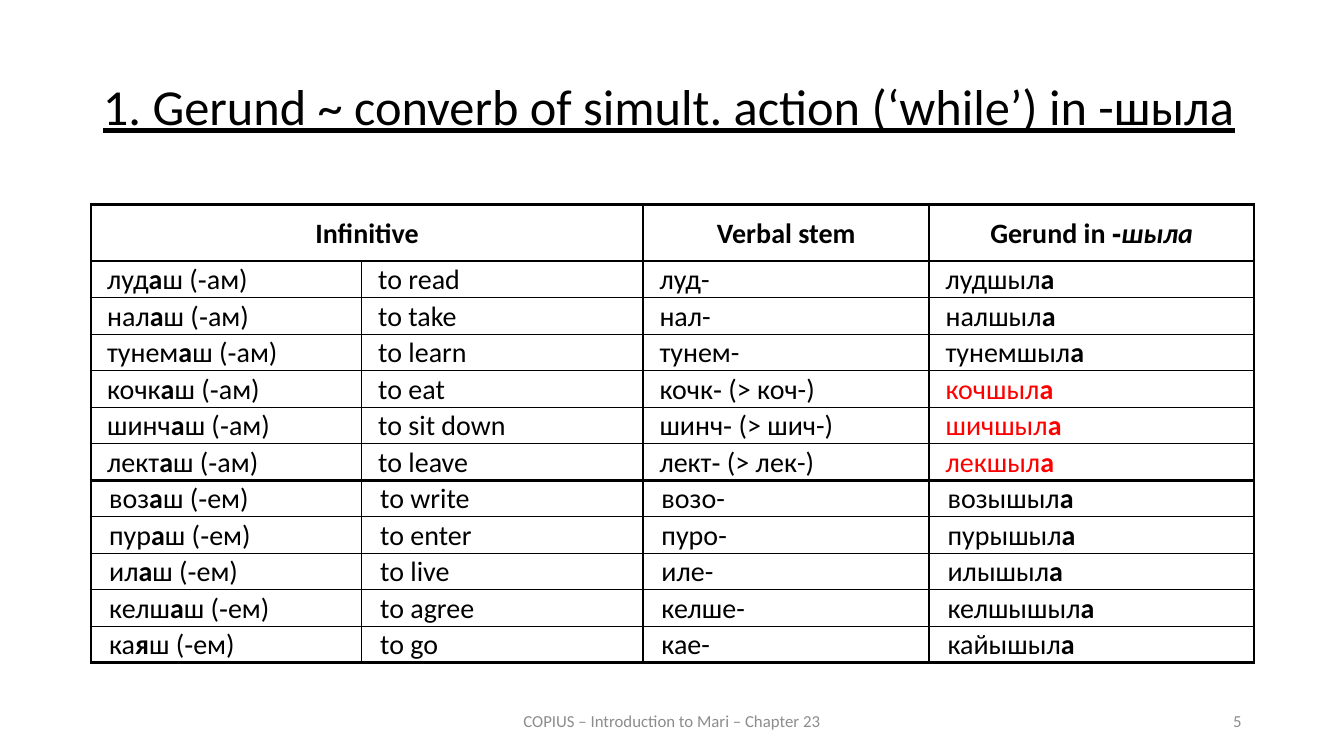
from lxml import etree
from pptx import Presentation
from pptx.dml import color
from pptx.enum import text
from pptx.oxml import ns
from pptx.util import Cm, Pt

COLORS = {"ink": "000000", "exception": "FF0000", "footer": "8C8C8C"}
FONT = "Calibri"
COLUMN_WIDTHS = (6.83, 7.09, 7.21, 8.18)
HEADER_HEIGHT, ROW_HEIGHT = 1.42, 0.92
COLUMN_EDGES = (2.25, 1, 1.5, 1.5, 2.25)
HEAVY_ROW_EDGES = (0, 1, 7, 12)

CONJUGATIONS = [
    ("ш (‑ам)", 0.41, [
        ("луд", "а", "to read", "луд-", "лудшыл"),
        ("нал", "а", "to take", "нал-", "налшыл"),
        ("тунем", "а", "to learn", "тунем-", "тунемшыл"),
        ("кочк", "а", "to eat", "кочк‑ (> коч-)", "кочшыл"),
        ("шинч", "а", "to sit down", "шинч‑ (> шич-)", "шичшыл"),
        ("лект", "а", "to leave", "лект‑ (> лек-)", "лекшыл"),
    ]),
    ("ш (‑ем)", 0.46, [
        ("воз", "а", "to write", "возо-", "возышыл"),
        ("пур", "а", "to enter", "пуро-", "пурышыл"),
        ("ил", "а", "to live", "иле-", "илышыл"),
        ("келш", "а", "to agree", "келше-", "келшышыл"),
        ("ка", "я", "to go", "кае-", "кайышыл"),
    ]),
]


def apply(target, formats):
    for name, value in formats.items():
        setattr(target, name, value)


def write(frame, spans, size, ink="ink", align=text.PP_ALIGN.JUSTIFY):
    para = frame.paragraphs[0]
    para.alignment = align
    for words, formats in spans:
        span = para.add_run()
        span.text = words
        apply(span.font, {"name": FONT, "size": Pt(size), "bold": False, **formats})
        span.font.color.rgb = color.RGBColor.from_string(COLORS[ink])
    return para


def draw_edges(cell, widths):
    properties = cell._tc.get_or_add_tcPr()
    for side, width in zip(("lnL", "lnR", "lnT", "lnB"), widths):
        line = etree.SubElement(properties, ns.qn(f"a:{side}"), w=str(Pt(width)))
        fill = etree.SubElement(line, ns.qn("a:solidFill"))
        etree.SubElement(fill, ns.qn("a:srgbClr"), val=COLORS["ink"])
    cell.fill.background()


def row_edge(index):
    return 2.25 if index in HEAVY_ROW_EDGES else 1


def fill_cell(table, row, column, spans, inset, **style):
    cell = table.cell(row, column)
    span_width = cell.span_width if cell.is_merge_origin else 1
    draw_edges(cell, (COLUMN_EDGES[column], COLUMN_EDGES[column + span_width],
                      row_edge(row), row_edge(row + 1)))
    apply(cell, {"margin_left": Cm(inset), "margin_right": Cm(inset),
                 "margin_top": Cm(0.05), "margin_bottom": Cm(0)})
    cell.vertical_anchor = text.MSO_ANCHOR.TOP if row else text.MSO_ANCHOR.MIDDLE
    write(cell.text_frame, spans, 20, **style)


def add_title(page, left, top, width, height):
    title = page.shapes.title
    apply(title, {"left": Cm(left), "top": Cm(top), "width": Cm(width), "height": Cm(height)})
    apply(title.text_frame, {"word_wrap": True, "auto_size": text.MSO_AUTO_SIZE.NONE,
                             "vertical_anchor": text.MSO_ANCHOR.TOP})
    para = write(title.text_frame,
                 [("1. Gerund ~ converb of simult. action (‘while’) in -шыла", {"underline": True})], 36)
    apply(para, {"line_spacing": 0.9, "space_before": Pt(12)})


def add_verb_table(page, left, top):
    verb_count = sum(len(verbs) for _, _, verbs in CONJUGATIONS)
    heights = [HEADER_HEIGHT] + [ROW_HEIGHT] * verb_count
    table = page.shapes.add_table(len(heights), len(COLUMN_WIDTHS), Cm(left), Cm(top),
                                  Cm(sum(COLUMN_WIDTHS)), Cm(sum(heights))).table
    apply(table, {"first_row": False, "horz_banding": False})
    for column, width in zip(table.columns, COLUMN_WIDTHS):
        column.width = Cm(width)
    for row, height in zip(table.rows, heights):
        row.height = Cm(height)

    table.cell(0, 0).merge(table.cell(0, 1))
    bold = {"bold": True}
    headings = {0: [("Infinitive", bold)], 2: [("Verbal stem", bold)],
                3: [("Gerund in ‑", bold), ("шыла", {"bold": True, "italic": True})]}
    for column, spans in headings.items():
        fill_cell(table, 0, column, spans, 0.41, align=text.PP_ALIGN.CENTER)

    row = 1
    for ending, inset, verbs in CONJUGATIONS:
        for root, vowel, meaning, stem, gerund in verbs:
            entries = ([(root, {}), (vowel, bold), (ending, {})],
                       [(meaning, {})], [(stem, {})], [(gerund, {}), ("а", bold)])
            for column, spans in enumerate(entries):
                shortened = column == 3 and ">" in stem
                fill_cell(table, row, column, spans, inset,
                          ink="exception" if shortened else "ink")
            row += 1


def add_footer(page, left, top, width, height, words, align):
    box = page.shapes.add_textbox(Cm(left), Cm(top), Cm(width), Cm(height))
    apply(box.text_frame, {"word_wrap": True, "vertical_anchor": text.MSO_ANCHOR.MIDDLE})
    write(box.text_frame, [(words, {})], 12, "footer", align)


def main():
    deck = Presentation()
    apply(deck, {"slide_width": Cm(33.87), "slide_height": Cm(19.05)})
    page = deck.slides.add_slide(deck.slide_layouts.get_by_name("Title Only"))
    add_verb_table(page, 2.29, 5.16)
    add_title(page, 2.34, 1.93, 29.21, 2.11)
    add_footer(page, 11.22, 17.65, 11.43, 1.02,
               "COPIUS – Introduction to Mari – Chapter 23", text.PP_ALIGN.CENTER)
    add_footer(page, 23.92, 17.65, 7.62, 1.02, "5", text.PP_ALIGN.RIGHT)
    deck.save("out.pptx")


if __name__ == "__main__":
    main()
